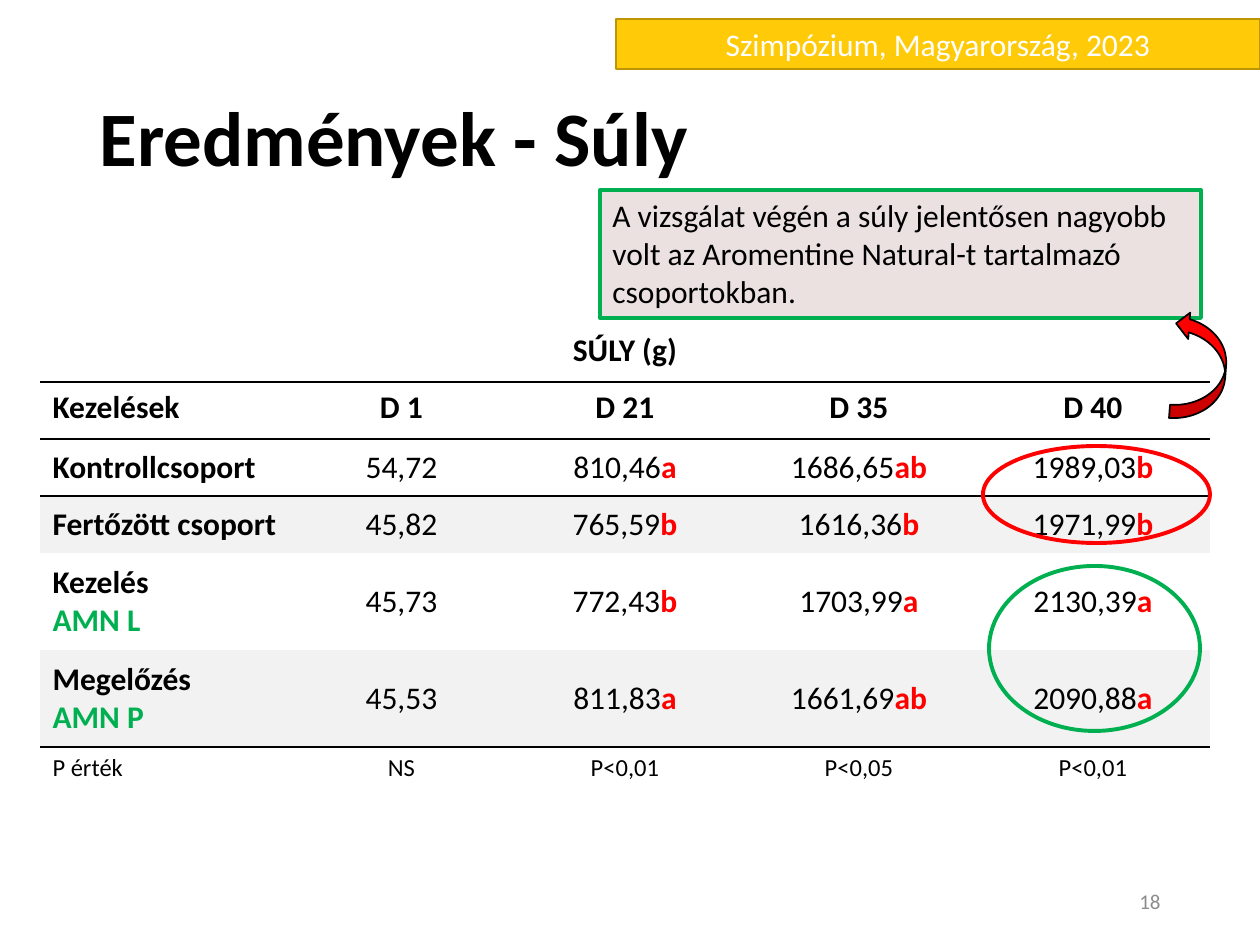
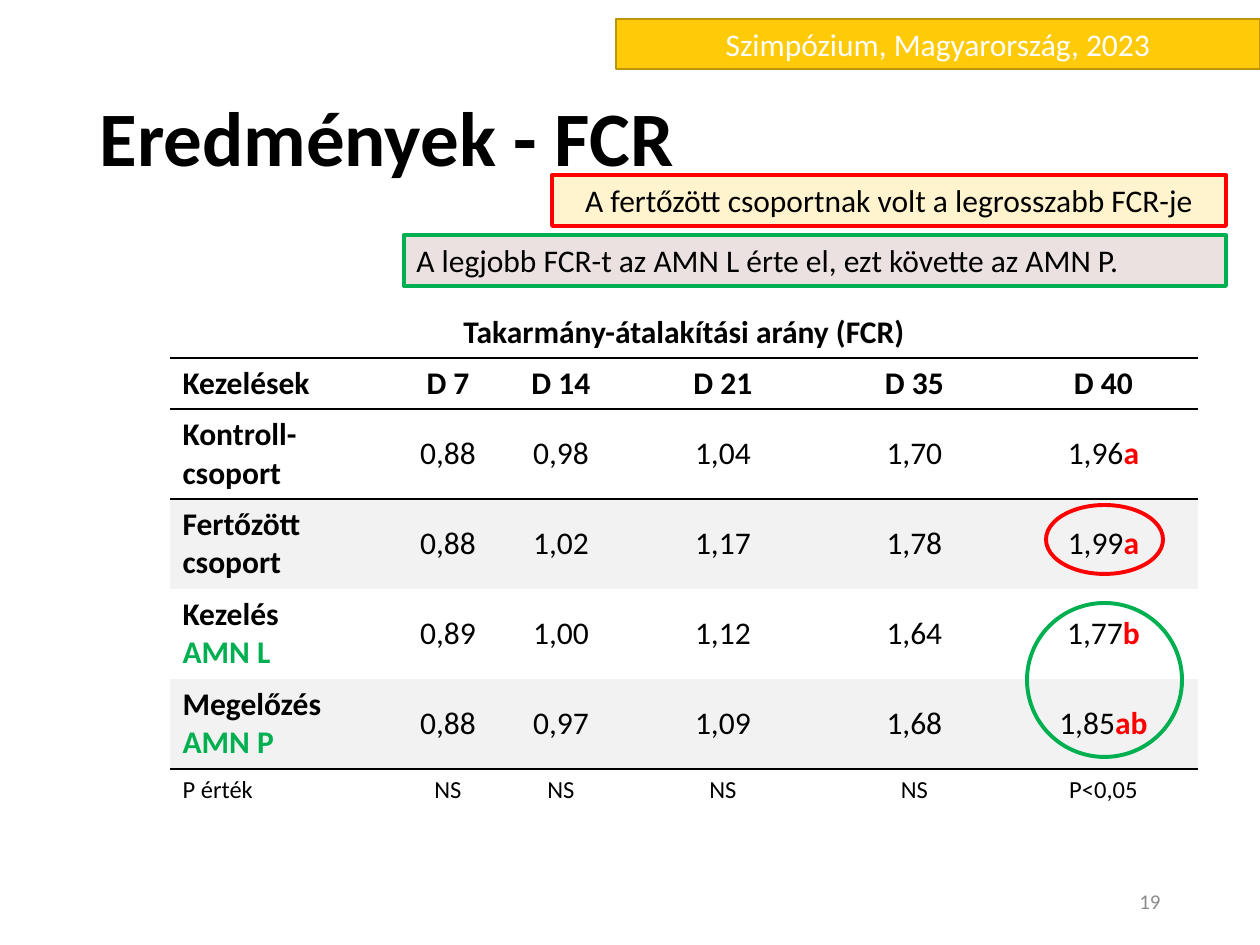
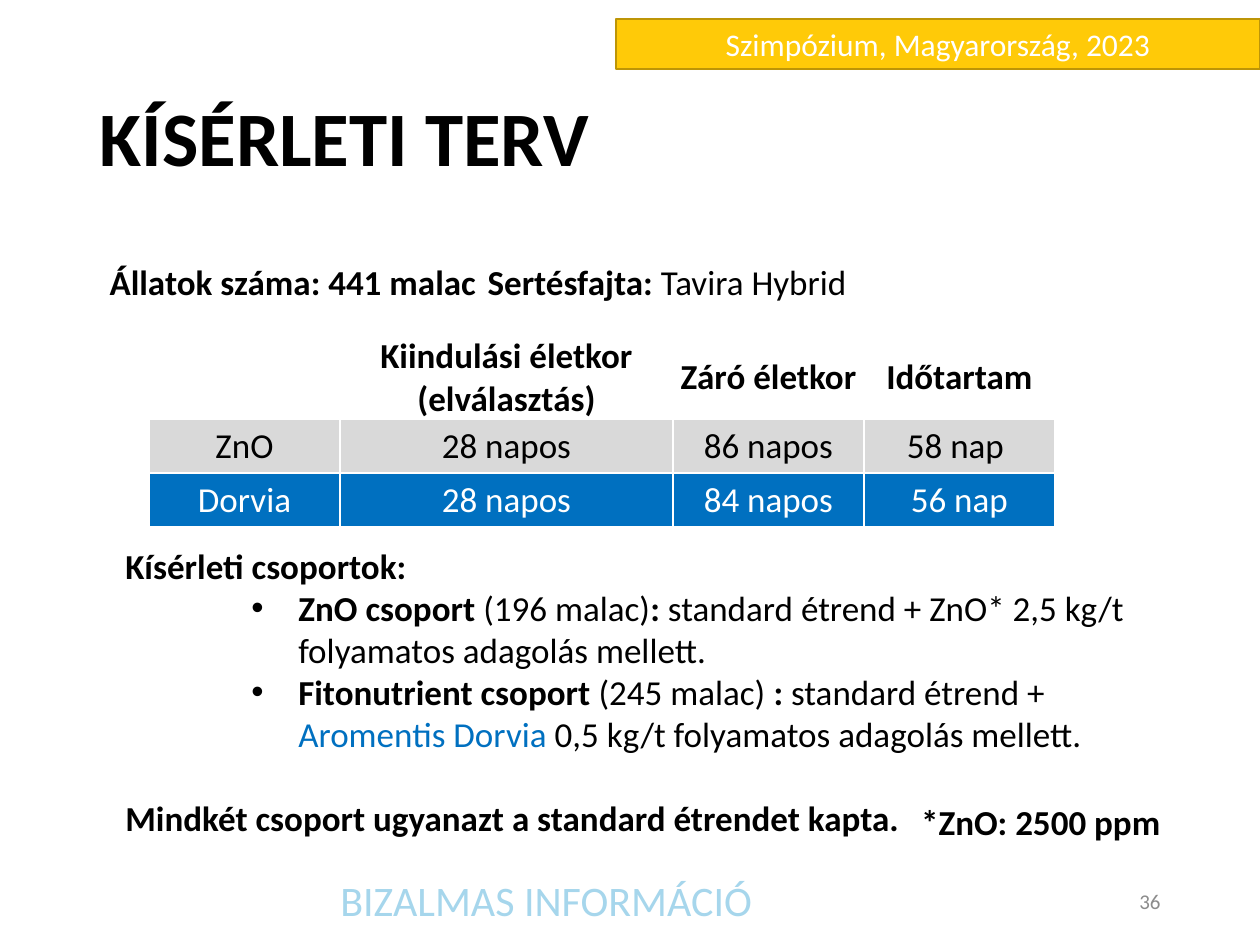
from pptx import Presentation
from pptx.dml.color import RGBColor
from pptx.enum.shapes import MSO_SHAPE
from pptx.enum.text import MSO_ANCHOR, MSO_AUTO_SIZE, PP_ALIGN
from pptx.oxml.ns import qn
from pptx.util import Pt
from lxml.etree import SubElement

EMU_PER_PX = 914400 / 126
FONT = "Calibri"
COLORS = {
    "black": "000000", "white": "FFFFFF", "red": "FF0000", "green": "00B050",
    "blue": "0070C0", "pale blue": "A6D6EC", "gold": "FFCA08", "dark gold": "BD9506",
    "rose": "EBE1E1", "cream": "FFF4CE", "stripe": "F2F2F2", "grey": "D9D9D9",
    "number": "8C8C8C",
}
LEFT, CENTER, RIGHT = PP_ALIGN.LEFT, PP_ALIGN.CENTER, PP_ALIGN.RIGHT
TOP, MIDDLE = MSO_ANCHOR.TOP, MSO_ANCHOR.MIDDLE
TITLE_ONLY, TITLE_AND_BODY = 5, 1


def px(length):
    return round(length * EMU_PER_PX)


def rgb(color):
    return RGBColor.from_string(COLORS[color])


# Text
def write(paragraph, text, size=18, color="black", bold=False, align=LEFT):
    paragraph.alignment = align
    run = paragraph.add_run()
    run.text = text
    run.font.name = FONT
    run.font.size = Pt(size)
    run.font.bold = bold
    run.font.color.rgb = rgb(color)


def next_paragraph(frame):
    first = frame.paragraphs[0]
    return frame.add_paragraph() if first.runs else first


def indent(paragraph, margin=0, hanging=0, bullet=None, tab=None):
    props = paragraph._p.get_or_add_pPr()
    props.set("marL", str(px(margin)))
    props.set("indent", str(-px(hanging)))
    if bullet:
        SubElement(props, qn("a:buFont"), typeface="Arial")
        SubElement(props, qn("a:buChar"), char=bullet)
    else:
        SubElement(props, qn("a:buNone"))
    if tab:
        stops = SubElement(props, qn("a:tabLst"))
        SubElement(stops, qn("a:tab"), pos=str(px(tab)), algn="l")


def add_text_box(slide, box, anchor=TOP):
    frame = slide.shapes.add_textbox(*map(px, box)).text_frame
    frame.word_wrap = True
    frame.vertical_anchor = anchor
    return frame


# Shapes
def add_figure(slide, kind, box, fill=None, line=None, width=2.25):
    figure = slide.shapes.add_shape(kind, *map(px, box))
    figure.shadow.inherit = False
    if fill:
        figure.fill.solid()
        figure.fill.fore_color.rgb = rgb(fill)
    else:
        figure.fill.background()
    if line:
        figure.line.color.rgb = rgb(line)
        figure.line.width = Pt(width)
    else:
        figure.line.fill.background()
    return figure


def add_label(slide, box, text, fill, line=None, width=2.25, anchor=TOP, **fmt):
    frame = add_figure(slide, MSO_SHAPE.RECTANGLE, box, fill, line, width).text_frame
    frame.word_wrap = True
    frame.vertical_anchor = anchor
    write(frame.paragraphs[0], text, **fmt)


def add_ring(slide, box, color):
    add_figure(slide, MSO_SHAPE.OVAL, box, line=color)


def add_curved_arrow(slide, box, rotation):
    arrow = add_figure(slide, MSO_SHAPE.CURVED_LEFT_ARROW, box, "red", "black", 1)
    arrow.rotation = rotation
    arrow._element.spPr.find(qn("a:xfrm")).set("flipH", "1")


# Tables
def add_grid(slide, left, top, widths, heights):
    grid = slide.shapes.add_table(len(heights), len(widths), px(left), px(top),
                                  px(sum(widths)), px(sum(heights))).table
    grid.first_row = grid.horz_banding = False
    for column, width in zip(grid.columns, widths):
        column.width = px(width)
    for row, height in zip(grid.rows, heights):
        row.height = px(height)
    return grid


def style_cell(cell, fill=None, anchor=MIDDLE, **borders):
    """Borders are given by side (L, R, T, B) as colour names; others are off."""
    props = cell._tc.get_or_add_tcPr()
    for side in "LRTB":
        edge = SubElement(props, qn(f"a:ln{side}"), w=str(Pt(1)))
        if side in borders:
            paint = SubElement(edge, qn("a:solidFill"))
            SubElement(paint, qn("a:srgbClr"), val=COLORS[borders[side]])
        else:
            SubElement(edge, qn("a:noFill"))
    cell.vertical_anchor = anchor
    if fill:
        cell.fill.solid()
        cell.fill.fore_color.rgb = rgb(fill)
    else:
        cell.fill.background()


def write_treatment(cell, treatment, **fmt):
    for line in treatment.split("\n"):
        color = "green" if line.startswith("AMN") else "black"
        write(next_paragraph(cell.text_frame), line, color=color, **fmt)


def write_result(cell, result, **fmt):
    """Significance letters after the number are bold red."""
    paragraph = cell.text_frame.paragraphs[0]
    number = result.rstrip("ab")
    write(paragraph, number, align=CENTER, **fmt)
    if number != result:
        write(paragraph, result[len(number):], color="red", bold=True, align=CENTER)


def add_results_table(slide, left, top, widths, heights, heading, rows):
    """Rows: heading, days, control, infected, treatment, prevention, P value."""
    grid = add_grid(slide, left, top, widths, heights)
    last = len(rows)
    ruled_below = {0, 1, 2, 5}
    striped = {3, 5}
    for r in range(last + 1):
        borders = {}
        if r in ruled_below:
            borders["B"] = "black"
        if r - 1 in ruled_below:
            borders["T"] = "black"
        for cell in grid.rows[r].cells:
            style_cell(cell, "stripe" if r in striped else None,
                       MIDDLE if 1 < r < last else TOP, **borders)
    grid.cell(0, 0).merge(grid.cell(0, len(widths) - 1))
    write(grid.cell(0, 0).text_frame.paragraphs[0], heading, bold=True, align=CENTER)
    for r, (treatment, *results) in enumerate(rows, 1):
        size = 14 if r == last else 18
        write_treatment(grid.cell(r, 0), treatment, size=size, bold=r < last)
        for c, result in enumerate(results, 1):
            write_result(grid.cell(r, c), result, size=size, bold=r == 1)


def add_ages_table(slide):
    rows = [
        ("white", "black", ["", "Kiindulási életkor (elválasztás)", "Záró életkor", "Időtartam"]),
        ("grey", "black", ["ZnO", "28 napos", "86 napos", "58 nap "]),
        ("blue", "white", ["Dorvia", "28 napos", "84 napos", "56 nap"]),
    ]
    grid = add_grid(slide, 149, 334, [191, 333, 191, 191], [85, 54, 54])
    for r, (fill, color, texts) in enumerate(rows):
        for cell, text in zip(grid.rows[r].cells, texts):
            style_cell(cell, fill, **dict.fromkeys("LRTB", "white"))
            cell.margin_left = cell.margin_right = cell.margin_top = px(1)
            cell.margin_bottom = 0
            if text:
                write(cell.text_frame.paragraphs[0], text, size=20, color=color,
                      bold=r == 0, align=CENTER)


# Parts shared by all slides
def add_page(deck, layout, title, number):
    slide = deck.slides.add_slide(deck.slide_layouts[layout])
    add_label(slide, (616, 19, 644, 50), "Szimpózium, Magyarország, 2023", "gold",
              "dark gold", 1, MIDDLE, color="white", align=CENTER)
    heading = slide.shapes.title
    heading.left, heading.top, heading.width, heading.height = map(px, (87, 50, 1086, 183))
    frame = heading.text_frame
    frame.auto_size = MSO_AUTO_SIZE.NONE
    frame.vertical_anchor = MIDDLE
    write(frame.paragraphs[0], title, size=44, bold=True)
    frame.paragraphs[0].line_spacing = 0.9
    page_number = add_text_box(slide, (890, 876, 283, 50), MIDDLE)
    write(page_number.paragraphs[0], str(number), size=12, color="number", align=RIGHT)
    return slide


def weight_slide(deck):
    slide = add_page(deck, TITLE_ONLY, "Eredmények - Súly", 18)
    add_results_table(
        slide, 40, 325, [255, 213] + [234] * 3, [57] * 4 + [97] * 2 + [47], "SÚLY (g)", [
            ["Kezelések", "D 1", "D 21", "D 35", "D 40"],
            ["Kontrollcsoport", "54,72", "810,46a", "1686,65ab", "1989,03b"],
            ["Fertőzött csoport", "45,82", "765,59b", "1616,36b", "1971,99b"],
            ["Kezelés\nAMN L", "45,73", "772,43b", "1703,99a", "2130,39a"],
            ["Megelőzés\nAMN P", "45,53", "811,83a", "1661,69ab", "2090,88a"],
            ["P érték", "NS", "P<0,01", "P<0,05", "P<0,01"],
        ])
    add_ring(slide, (983, 446, 227, 97), "red")
    add_label(slide, (600, 190, 601, 128),
              "A vizsgálat végén a súly jelentősen nagyobb volt az Aromentine Natural-t "
              "tartalmazó csoportokban.", "rose", "green")
    add_ring(slide, (989, 566, 211, 165), "green")
    add_curved_arrow(slide, (1173, 312, 53, 108), 184.3)


def fcr_slide(deck):
    slide = add_page(deck, TITLE_ONLY, "Eredmények - FCR", 19)
    add_results_table(
        slide, 170, 307, [230, 96, 130, 194, 189, 189], [51] * 2 + [90] * 4 + [43],
        "Takarmány-átalakítási arány (FCR)", [
            ["Kezelések", "D 7", "D 14", "D 21", "D 35", "D 40"],
            ["Kontroll-\ncsoport", "0,88", "0,98", "1,04", "1,70", "1,96a"],
            ["Fertőzött csoport", "0,88", "1,02", "1,17", "1,78", "1,99a"],
            ["Kezelés\nAMN L", "0,89", "1,00", "1,12", "1,64", "1,77b"],
            ["Megelőzés\nAMN P", "0,88", "0,97", "1,09", "1,68", "1,85ab"],
            ["P érték", "NS", "NS", "NS", "NS", "P<0,05"],
        ])
    add_ring(slide, (1027, 603, 155, 154), "green")
    add_ring(slide, (1046, 505, 117, 69), "red")
    add_label(slide, (552, 175, 674, 51),
              "A fertőzött csoportnak volt a legrosszabb FCR-je", "cream", "red", align=CENTER)
    add_label(slide, (404, 235, 822, 51),
              "A legjobb FCR-t az AMN L érte el, ezt követte az AMN P.", "rose", "green")


def add_groups(slide):
    groups = add_text_box(slide, (113, 538, 1099, 310))
    write(groups.paragraphs[0], "Kísérleti csoportok:", size=20, bold=True)
    diets = [
        [("ZnO csoport ", True, "black"), ("(196 malac)", False, "black"),
         (": ", True, "black"),
         ("standard étrend + ZnO* 2,5 kg/t folyamatos adagolás mellett.", False, "black")],
        [("Fitonutrient csoport ", True, "black"), ("(245 malac) ", False, "black"),
         (": ", True, "black"), ("standard étrend + ", False, "black"),
         ("Aromentis Dorvia ", False, "blue"),
         ("0,5 kg/t folyamatos adagolás mellett.", False, "black")],
    ]
    for diet in diets:
        paragraph = groups.add_paragraph()
        indent(paragraph, margin=173, hanging=47, bullet="•")
        for text, bold, color in diet:
            write(paragraph, text, size=20, bold=bold, color=color)
    closing = groups.add_paragraph()
    write(closing, "Mindkét csoport ugyanazt a standard étrendet kapta.", size=20, bold=True)
    closing.space_before = Pt(24)


def plan_slide(deck):
    slide = add_page(deck, TITLE_AND_BODY, "KÍSÉRLETI TERV", 36)
    # Animals and breed
    body = slide.placeholders[1]
    body.left, body.top, body.width, body.height = map(px, (97, 233, 1086, 600))
    body.text_frame.auto_size = MSO_AUTO_SIZE.NONE
    animals = body.text_frame.paragraphs[0]
    indent(animals, tab=511)
    write(animals, "Állatok száma: 441 malac\tSertésfajta: ", size=20, bold=True)
    write(animals, "Tavira Hybrid", size=20)
    animals.line_spacing = 1.5
    animals.space_before = Pt(0)

    add_label(slide, (328, 868, 553, 63), "BIZALMAS INFORMÁCIÓ", "white",
              size=24, color="pale blue")
    add_ages_table(slide)
    add_groups(slide)
    dose_note = add_text_box(slide, (765, 794, 408, 55))
    write(dose_note.paragraphs[0], "*ZnO: 2500 ppm", size=20, bold=True, align=RIGHT)


def main():
    deck = Presentation()
    deck.slide_width, deck.slide_height = px(1260), px(945)
    weight_slide(deck)
    fcr_slide(deck)
    plan_slide(deck)
    deck.save("out.pptx")


if __name__ == "__main__":
    main()
